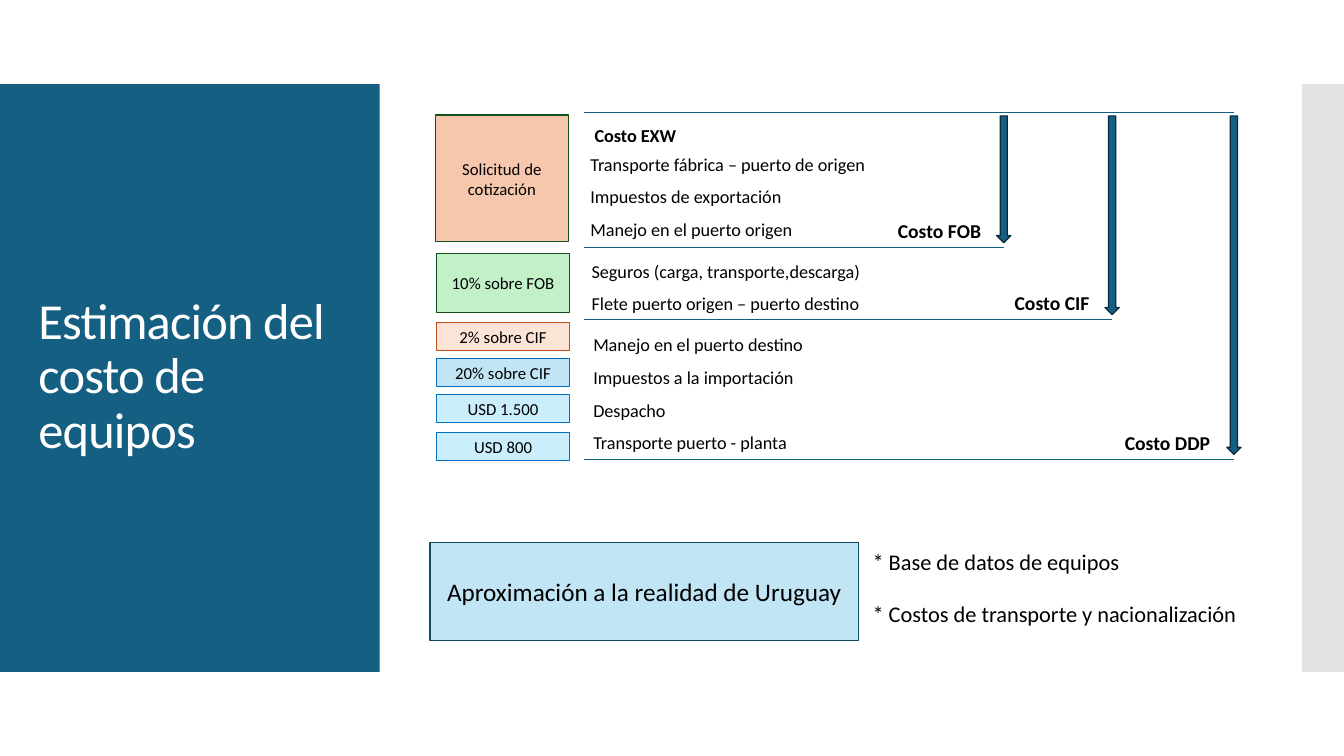
"""Build the slide on how equipment costs add up from EXW to DDP."""
from dataclasses import dataclass
from typing import Optional

from lxml.etree import SubElement
from pptx import Presentation
from pptx.dml.color import RGBColor
from pptx.enum.shapes import MSO_CONNECTOR, MSO_SHAPE
from pptx.enum.text import MSO_ANCHOR, PP_ALIGN
from pptx.oxml.ns import qn
from pptx.util import Inches, Length, Pt

FONT = "Calibri"
WHITE = RGBColor(0xFF, 0xFF, 0xFF)
BLACK = RGBColor(0x00, 0x00, 0x00)
TEAL = RGBColor(0x15, 0x60, 0x82)
DARK_TEAL = RGBColor(0x10, 0x48, 0x62)
NIGHT = RGBColor(0x09, 0x2A, 0x39)
GREY = RGBColor(0xE3, 0xE3, 0xE3)
SALMON = RGBColor(0xF6, 0xC6, 0xAD)
PEACH = RGBColor(0xFB, 0xE3, 0xD6)
RUST = RGBColor(0xC0, 0x4F, 0x15)
MINT = RGBColor(0xC2, 0xF1, 0xC8)
FOREST = RGBColor(0x13, 0x50, 0x1B)
SKY = RGBColor(0xC1, 0xE5, 0xF5)
ICE = RGBColor(0xCA, 0xEE, 0xFB)
BLUE = RGBColor(0x00, 0x70, 0xC0)

COLS, ROWS = 160, 90
WIDTH, HEIGHT = Inches(13.333), Inches(7.5)
TOP_RULE, RULE_LEFT = 13.45, 69.5
ARROW_TOP, ARROW_WIDTH = 13.8, 1.7


@dataclass(frozen=True)
class Area:
    """Place on the grid, in columns and rows."""
    col: float
    row: float
    cols: float
    rows: float


@dataclass(frozen=True)
class Style:
    """Look of a text."""
    size: float
    bold: bool = False
    color: RGBColor = BLACK
    align: PP_ALIGN = PP_ALIGN.LEFT
    spacing: float = 1.0
    tracking: int = 0


@dataclass(frozen=True)
class Box:
    """Filled rectangle with optional outline and text."""
    area: Area
    fill: RGBColor
    line: Optional[RGBColor] = None
    lines: tuple[str, ...] = ()
    style: Style = Style(12, align=PP_ALIGN.CENTER)


@dataclass(frozen=True)
class Stage:
    """Cost level: its label, arrow column, closing rule and label width."""
    label: str
    col: float
    floor: float
    label_cols: float


LABEL = Style(14, bold=True, align=PP_ALIGN.CENTER)
ITEM = Style(13, spacing=1.5)
NOTE = Style(16)
TITLE = Style(36, color=WHITE, spacing=0.9, tracking=-60)

PANELS = (
    Box(Area(0, 10, 45.2, 70), TEAL),
    Box(Area(155, 10, 5, 70), GREY),
)
STAGES = (
    Stage("Costo FOB", 119.5, 29.5, 13.2),
    Stage("Costo CIF", 132.4, 38.05, 12.2),
    Stage("Costo DDP", 146.9, 54.7, 13.7),
)
RATES = (
    Box(Area(51.85, 13.7, 15.8, 15.1), SALMON, FOREST, ("Solicitud de cotización",)),
    Box(Area(52, 30.15, 15.8, 7.1), MINT, FOREST, ("10% sobre FOB",)),
    Box(Area(52, 38.4, 15.8, 3.35), PEACH, RUST, ("2% sobre CIF",)),
    Box(Area(52, 42.7, 15.8, 3.35), SKY, BLUE, ("20% sobre CIF",)),
    Box(Area(52, 47, 15.8, 3.35), ICE, BLUE, ("USD 1.500",)),
    Box(Area(52, 51.5, 15.8, 3.35), ICE, BLUE, ("USD 800",)),
    Box(Area(51.2, 64.6, 51, 11.65), SKY, DARK_TEAL,
        ("Aproximación a la realidad de Uruguay",), Style(18, align=PP_ALIGN.CENTER)),
)
ITEMS = (
    Box(Area(69.1, 16.8, 36.5, 11.9), WHITE, None,
        ("Transporte fábrica – puerto de origen", "Impuestos de exportación",
         "Manejo en el puerto origen"), ITEM),
    Box(Area(69.25, 30.35, 50.4, 6.4), WHITE, None,
        ("Seguros (carga, transporte,descarga)",
         "Flete puerto origen – puerto destino"), ITEM),
    Box(Area(69.45, 39, 50.4, 14.4), WHITE, None,
        ("Manejo en el puerto destino", "Impuestos a la importación",
         "Despacho", "Transporte puerto - planta"), ITEM),
    Box(Area(69.6, 13.7, 36.5, 3.4), WHITE, None, ("Costo EXW",),
        Style(13, bold=True, spacing=1.5)),
)
TEXTS = (
    (Area(3.4, 14.75, 38.6, 60.4), "Estimación del costo de equipos", TITLE),
    (Area(102.1, 64.45, 48.5, 4.7), " * Base de datos de equipos", NOTE),
    (Area(102.1, 70.7, 48.5, 4.7), " * Costos de transporte y nacionalización", NOTE),
)


def x(col: float) -> Length:
    """Turn columns into a length."""
    return Length(round(WIDTH * col / COLS))


def y(row: float) -> Length:
    """Turn rows into a length."""
    return Length(round(HEIGHT * row / ROWS))


def frame(area: Area) -> tuple[Length, Length, Length, Length]:
    """Give the left, top, width and height of an area."""
    return x(area.col), y(area.row), x(area.cols), y(area.rows)


def write(sp, lines: tuple[str, ...], style: Style) -> None:
    """Write one paragraph per line, centred vertically."""
    tf = sp.text_frame
    tf.word_wrap = True
    tf.vertical_anchor = MSO_ANCHOR.MIDDLE
    for i, line in enumerate(lines):
        p = tf.add_paragraph() if i else tf.paragraphs[0]
        p.alignment = style.align
        p.line_spacing = style.spacing
        r = p.add_run()
        r.text = line
        r.font.name = FONT
        r.font.size = Pt(style.size)
        r.font.bold = style.bold
        r.font.color.rgb = style.color
        if style.tracking:
            r.font._element.set("spc", str(style.tracking))


def draw_box(shapes, box: Box, kind: MSO_SHAPE = MSO_SHAPE.RECTANGLE) -> None:
    """Draw a filled shape and its text."""
    sp = shapes.add_shape(kind, *frame(box.area))
    sp.shadow.inherit = False
    sp.fill.solid()
    sp.fill.fore_color.rgb = box.fill
    if box.line is None:
        sp.line.fill.background()
    else:
        sp.line.color.rgb = box.line
        sp.line.width = Pt(0.85)
    if box.lines:
        write(sp, box.lines, box.style)


def draw_rule(shapes, right: float, row: float) -> None:
    """Draw a horizontal rule from the common left edge."""
    rule = shapes.add_connector(MSO_CONNECTOR.STRAIGHT, x(RULE_LEFT), y(row), x(right), y(row))
    rule.line.color.rgb = TEAL
    rule.line.width = Pt(0.75)
    SubElement(rule._element.spPr, qn("a:effectLst"))


def draw_stage(shapes, stage: Stage) -> None:
    """Draw the arrow, the closing rule and the label of a cost level."""
    arrow = Area(stage.col - ARROW_WIDTH / 2, ARROW_TOP,
                 ARROW_WIDTH, stage.floor - 0.6 - ARROW_TOP)
    draw_box(shapes, Box(arrow, TEAL, NIGHT), MSO_SHAPE.DOWN_ARROW)
    draw_rule(shapes, stage.col, stage.floor)
    label = Area(stage.col - 1.05 - stage.label_cols, stage.floor - 3.9, stage.label_cols, 3.7)
    draw_box(shapes, Box(label, WHITE, None, (stage.label,), LABEL))


def main() -> None:
    """Build and save the slide."""
    prs = Presentation()
    prs.slide_width, prs.slide_height = WIDTH, HEIGHT
    shapes = prs.slides.add_slide(prs.slide_layouts[6]).shapes
    for panel in PANELS:
        draw_box(shapes, panel)
    draw_rule(shapes, STAGES[-1].col, TOP_RULE)
    for stage in STAGES:
        draw_stage(shapes, stage)
    for box in RATES + ITEMS:
        draw_box(shapes, box)
    for area, text, style in TEXTS:
        write(shapes.add_textbox(*frame(area)), (text,), style)
    prs.save("out.pptx")


if __name__ == "__main__":
    main()
